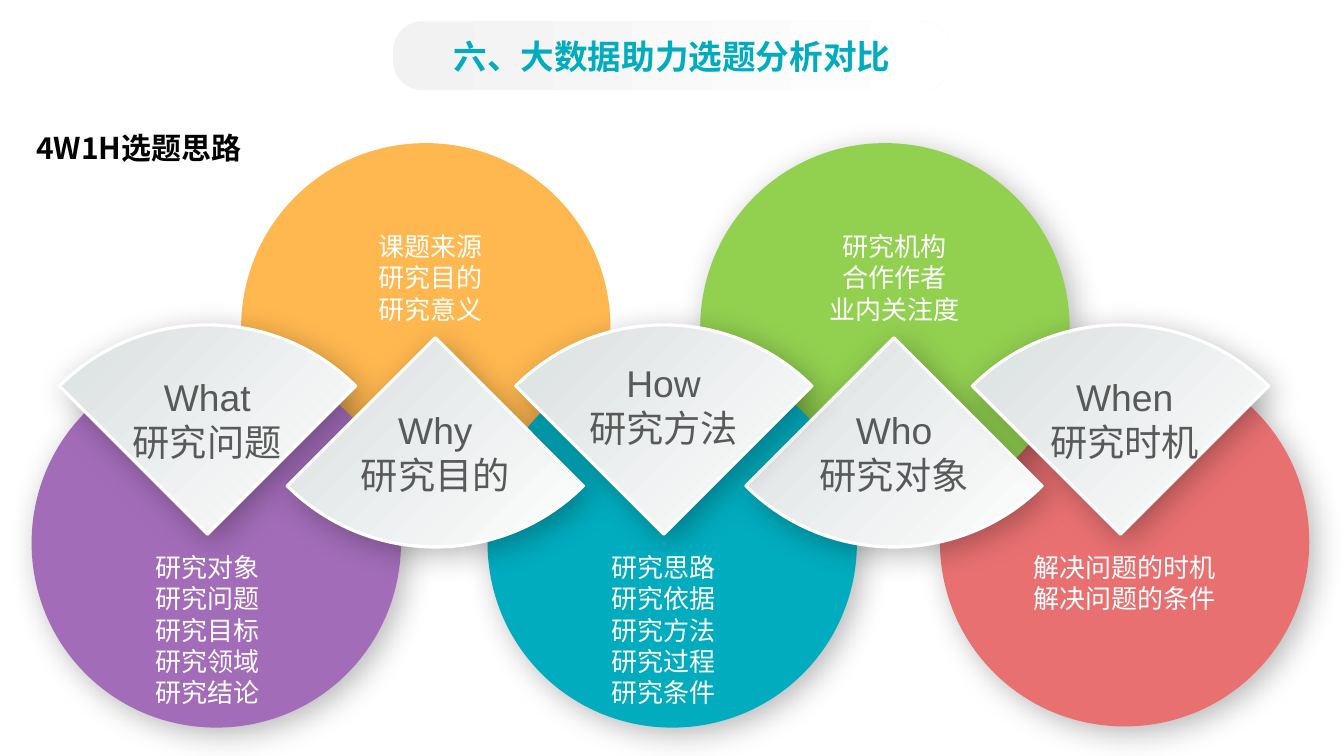
"""Build the 4W1H topic selection slide with five circles and five wedges."""
import math

import pptx
import pptx.dml.color
import pptx.enum.shapes
import pptx.enum.text
import pptx.oxml.ns
import pptx.util
from lxml import etree

Cm, Pt = pptx.util.Cm, pptx.util.Pt
RGBColor = pptx.dml.color.RGBColor
ALIGN = pptx.enum.text.PP_ALIGN
qn = pptx.oxml.ns.qn

WHITE = RGBColor(0xFF, 0xFF, 0xFF)
BLACK = RGBColor(0x00, 0x00, 0x00)
GREY = RGBColor(0x59, 0x59, 0x59)
TITLE_GREY = RGBColor(0xF2, 0xF2, 0xF2)
WEDGE_GREY = RGBColor(0xD9, 0xDE, 0xDF)
PURPLE = RGBColor(0xA2, 0x6C, 0xB8)
ORANGE = RGBColor(0xFF, 0xB8, 0x50)
TEAL = RGBColor(0x01, 0xAC, 0xBE)
GREEN = RGBColor(0x92, 0xD0, 0x50)
RED = RGBColor(0xE8, 0x70, 0x71)
CJK_FONT = "Noto Sans CJK SC"
CIRCLE_RADIUS = 4.66
WEDGE_RADIUS = 5.28
HANDLE = 0.55


def write_lines(shape, lines, size, color, latin=CJK_FONT, bold=False, align=ALIGN.CENTER):
    """Fill a shape with one paragraph per line."""
    frame = shape.text_frame
    frame.word_wrap = False
    for number, line in enumerate(lines):
        para = frame.add_paragraph() if number else frame.paragraphs[0]
        para.alignment = align
        span = para.add_run()
        span.text = line
        span.font.size = Pt(size)
        span.font.bold = bold
        span.font.color.rgb = color
        span.font.name = latin
        etree.SubElement(span.font._element, qn("a:ea"), typeface=CJK_FONT)


def draw_curves(center_x, center_y, scale_x, scale_y, points, shadowed=True):
    """Draw a closed outline of cubic curves, three points to a curve."""
    places = [(Cm(center_x + scale_x * x), Cm(center_y + scale_y * y)) for x, y in points]
    builder = page.shapes.build_freeform(*places[0])
    builder.add_line_segments(places[1:], close=True)
    shape = builder.convert_to_shape()
    steps = list(shape._element.iter(qn("a:lnTo")))
    for first in range(0, len(steps), 3):
        curve = etree.Element(qn("a:cubicBezTo"))
        steps[first].addprevious(curve)
        for step in steps[first:first + 3]:
            curve.append(step[0])
            step.getparent().remove(step)
    shape.line.fill.background()
    shape.shadow.inherit = False
    if shadowed:
        effects = shape._element.spPr.find(qn("a:effectLst"))
        shadow = etree.SubElement(effects, qn("a:outerShdw"), blurRad=str(Pt(22)),
                                  dist=str(Pt(6)), dir="2700000", algn="tl", rotWithShape="0")
        tint = etree.SubElement(shadow, qn("a:srgbClr"), val="000000")
        etree.SubElement(tint, qn("a:alpha"), val="28000")
    return shape


unit_circle = [(math.cos(math.pi / 4), math.sin(math.pi / 4))]
for quarter in range(4):
    start = math.pi / 4 + quarter * math.pi / 2
    end = start + math.pi / 2
    unit_circle += [
        (math.cos(start) - HANDLE * math.sin(start), math.sin(start) + HANDLE * math.cos(start)),
        (math.cos(end) + HANDLE * math.sin(end), math.sin(end) - HANDLE * math.cos(end)),
        (math.cos(end), math.sin(end)),
    ]
unit_wedge = unit_circle[:4] + [(0, 0)] * 3 + unit_circle[:1] * 3

deck = pptx.Presentation()
deck.slide_width, deck.slide_height = Cm(33.87), Cm(19.05)
page = deck.slides.add_slide(deck.slide_layouts[6])

circles = [
    (28.34, 13.65, RED, True),
    (10.73, 8.26, ORANGE, False),
    (22.3, 8.26, GREEN, True),
    (5.45, 13.68, PURPLE, True),
    (16.94, 13.68, TEAL, True),
]
for center_x, center_y, color, shadowed in circles:
    circle = draw_curves(center_x, center_y, CIRCLE_RADIUS, CIRCLE_RADIUS, unit_circle, shadowed)
    circle.fill.solid()
    circle.fill.fore_color.rgb = color

title = page.shapes.add_shape(pptx.enum.shapes.MSO_SHAPE.ROUNDED_RECTANGLE,
                              Cm(9.91), Cm(0.54), Cm(14.05), Cm(1.73))
title.adjustments[0] = 0.42
title.shadow.inherit = False
title.line.fill.background()
title.fill.gradient()
title.fill.gradient_angle = 0
for stop, color in zip(title.fill.gradient_stops, (TITLE_GREY, WHITE)):
    stop.color.rgb = color
write_lines(title, ["六、大数据助力选题分析对比"], 24, TEAL, bold=True)

wedges = [
    (5.23, 13.46, -1, 2.99, 9.25, ["What", "研究问题"]),
    (22.53, 8.51, 1, 20.3, 10.08, ["Who", "研究对象"]),
    (10.97, 8.51, 1, 8.74, 10.08, ["Why", "研究目的"]),
    (16.73, 13.46, -1, 14.49, 8.9, ["How", "研究方法"]),
    (28.24, 13.46, -1, 26.11, 9.25, ["When", "研究时机"]),
]
for apex_x, apex_y, direction, left, top, lines in wedges:
    wedge = draw_curves(apex_x, apex_y, WEDGE_RADIUS, direction * WEDGE_RADIUS, unit_wedge)
    wedge.fill.gradient()
    wedge.fill.gradient_angle = 315
    for stop, color in zip(wedge.fill.gradient_stops, (WEDGE_GREY, WHITE)):
        stop.color.rgb = color
    wedge.line.color.rgb = WHITE
    wedge.line.width = Pt(2.25)
    label = page.shapes.add_textbox(Cm(left), Cm(top), Cm(4.47), Cm(2.64))
    label.text_frame.margin_top = label.text_frame.margin_bottom = Cm(0.18)
    write_lines(label, lines, 26.6, GREY, latin="Arial")

notes = [
    (3.56, 13.72, ["研究对象", "研究问题", "研究目标", "研究领域", "研究结论"]),
    (9.17, 5.63, ["课题来源", "研究目的", "研究意义"]),
    (15.05, 13.72, ["研究思路", "研究依据", "研究方法", "研究过程", "研究条件"]),
    (20.54, 5.63, ["研究机构", "合作作者", "业内关注度"]),
    (25.68, 13.72, ["解决问题的时机", "解决问题的条件"]),
]
for left, top, lines in notes:
    width = 0.71 + 0.66 * max(len(line) for line in lines)
    note = page.shapes.add_textbox(Cm(left), Cm(top), Cm(width), Cm(0.36 + 0.8 * len(lines)))
    note.text_frame.margin_top = note.text_frame.margin_bottom = Cm(0.18)
    write_lines(note, lines, 18.6, WHITE)

heading = page.shapes.add_textbox(Cm(0.66), Cm(3.14), Cm(5.89), Cm(1.17))
write_lines(heading, ["4W1H选题思路"], 21.4, BLACK, bold=True, align=ALIGN.LEFT)

deck.save("out.pptx")
